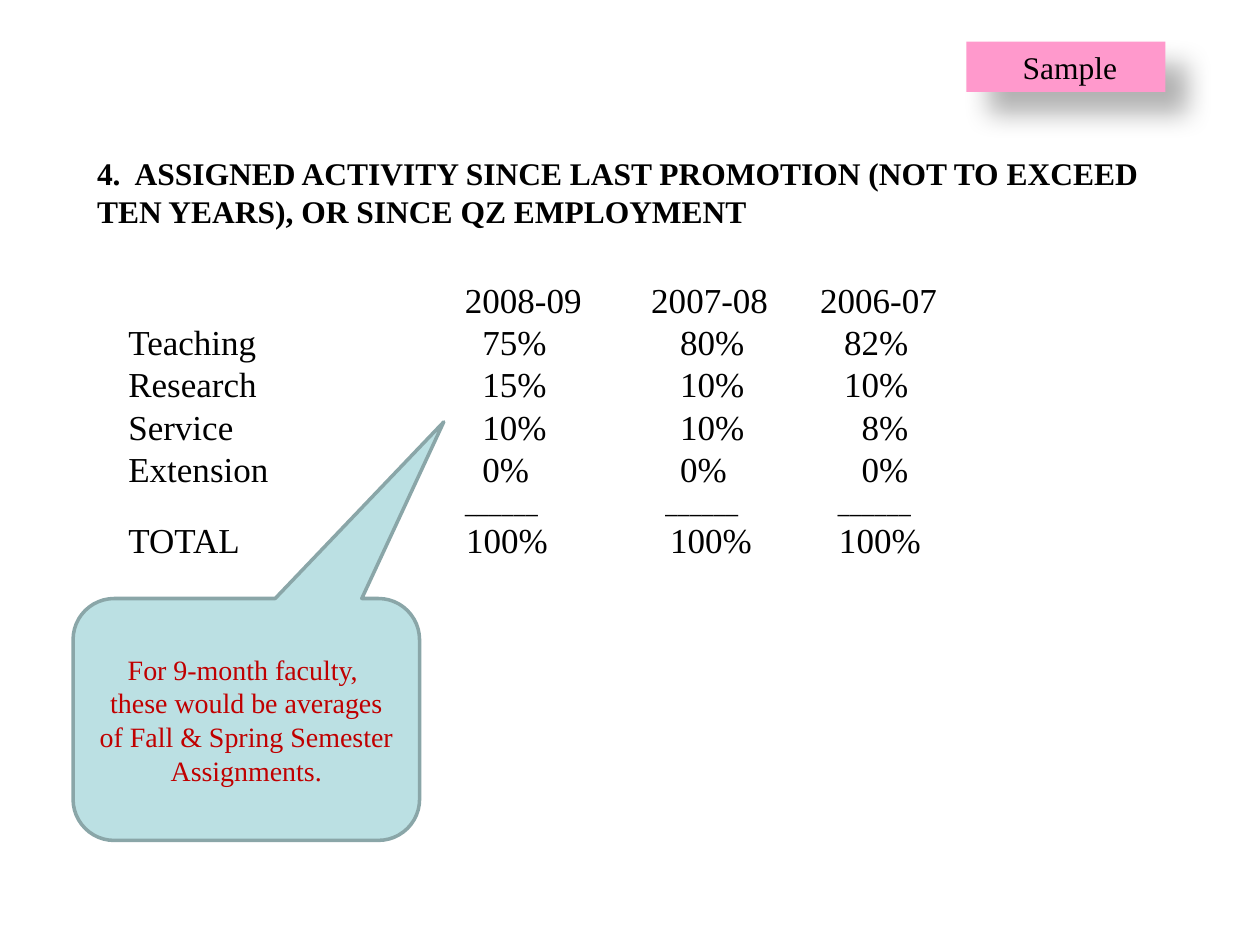
from lxml import etree
from pptx import Presentation
from pptx.dml.color import RGBColor
from pptx.enum.shapes import MSO_SHAPE
from pptx.enum.text import MSO_ANCHOR, PP_ALIGN
from pptx.oxml.ns import qn
from pptx.util import Inches, Pt

RECT = MSO_SHAPE.RECTANGLE
BUBBLE = MSO_SHAPE.ROUNDED_RECTANGULAR_CALLOUT
TOP, MIDDLE, BOTTOM = MSO_ANCHOR.TOP, MSO_ANCHOR.MIDDLE, MSO_ANCHOR.BOTTOM
LEFT, CENTER = PP_ALIGN.LEFT, PP_ALIGN.CENTER
COLORS = {"ink": "000000", "pink": "FF99CC", "aqua": "BBE0E3",
          "edge": "8AA6A8", "red": "C00000"}
SERIF, SANS = "Times New Roman", "Calibri"
WIDE, HIGH = 10, 7.5


def rgb(name):
    return RGBColor.from_string(COLORS[name])


def write(para, text, size=20, font=SERIF, color="ink", bold=False,
          align=LEFT, pitch=None, tabs=()):
    """Fill a paragraph; tabs are (inches, alignment) pairs, pitch is points."""
    para.alignment = align
    if pitch:
        para.line_spacing = Pt(pitch)
    run = para.add_run()
    run.text = text
    run.font.size, run.font.name, run.font.bold = Pt(size), font, bold
    run.font.color.rgb = rgb(color)
    if tabs:
        stops = etree.SubElement(para._p.get_or_add_pPr(), qn("a:tabLst"))
        for pos, side in tabs:
            etree.SubElement(stops, qn("a:tab"), pos=str(Inches(pos)), algn=side)


deck = Presentation()
deck.slide_width, deck.slide_height = Inches(WIDE), Inches(HIGH)
slide = deck.slides.add_slide(deck.slide_layouts[5])

# Heading
title = slide.shapes.title
title.left, title.top = Inches(0.67), Inches(1.17)
title.width, title.height = Inches(8.5), Inches(0.7)
title.text_frame.vertical_anchor = TOP
title.text_frame.word_wrap = True
write(title.text_frame.paragraphs[0],
      "4.  ASSIGNED ACTIVITY SINCE LAST PROMOTION (NOT TO EXCEED "
      "TEN YEARS), OR SINCE QZ EMPLOYMENT", size=18, bold=True)

# Yearly shares, set in tabbed columns
body = [(2.81, "l"), (4.38, "l"), (6.19, "r")]
head = [(2.67, "l"), (4.15, "l"), (5.49, "l")]
rule = [(2.67, "l"), (4.26, "l"), (5.63, "l")]
total = [(2.68, "l"), (4.3, "l"), (5.64, "l")]
plain = {"pitch": 24}
lines = [
    (["", "2008-09", "2007-08", "2006-07"], head, plain),
    (["Teaching", "75%", "80%", "82%"], body, plain),
    (["Research", "15%", "10%", "10%"], body, plain),
    (["Service", "10%", "10%", "8%"], body, plain),
    (["Extension", "0%", "0%", "0%"], body, plain),
    ([""] + ["______"] * 3, rule, {"pitch": 17, "size": 14, "font": SANS}),
    (["TOTAL"] + ["100%"] * 3, total, plain),
]
box = slide.shapes.add_textbox(Inches(0.92), Inches(2.08),
                               Inches(7.58), Inches(2.42))
frame = box.text_frame
frame.word_wrap = True
frame.vertical_anchor = BOTTOM
for num, (cells, tabs, style) in enumerate(lines):
    para = frame.add_paragraph() if num else frame.paragraphs[0]
    write(para, "\t".join(cells), tabs=tabs, **style)

# Sample tag with a soft shadow
tag = slide.shapes.add_shape(RECT, Inches(7.67), Inches(0.33),
                             Inches(1.58), Inches(0.4))
tag.shadow.inherit = False
tag.fill.solid()
tag.fill.fore_color.rgb = rgb("pink")
tag.line.fill.background()
tag.text_frame.vertical_anchor = TOP
write(tag.text_frame.paragraphs[0], " Sample", size=18, align=CENTER)
glow = etree.SubElement(tag._element.spPr.find(qn("a:effectLst")),
                        qn("a:outerShdw"), blurRad=str(Pt(15)),
                        dist=str(Pt(18)), dir=str(45 * 60000),
                        algn="ctr", rotWithShape="0")
tone = etree.SubElement(glow, qn("a:srgbClr"), val=COLORS["ink"])
etree.SubElement(tone, qn("a:alpha"), val="30000")

# Callout that points at the shares
note = slide.shapes.add_shape(BUBBLE, Inches(0.58), Inches(4.75),
                              Inches(2.75), Inches(1.92))
for num, value in enumerate((0.57, -1.23, 0.17)):
    note.adjustments[num] = value
note.shadow.inherit = False
note.fill.solid()
note.fill.fore_color.rgb = rgb("aqua")
note.line.color.rgb = rgb("edge")
note.line.width = Pt(2)
frame = note.text_frame
frame.word_wrap = True
frame.vertical_anchor = MIDDLE
notes = ["For 9-month faculty, ",
         "these would be averages of Fall & Spring Semester Assignments."]
for num, text in enumerate(notes):
    para = frame.add_paragraph() if num else frame.paragraphs[0]
    write(para, text, size=16, color="red", align=CENTER)

deck.save("out.pptx")
